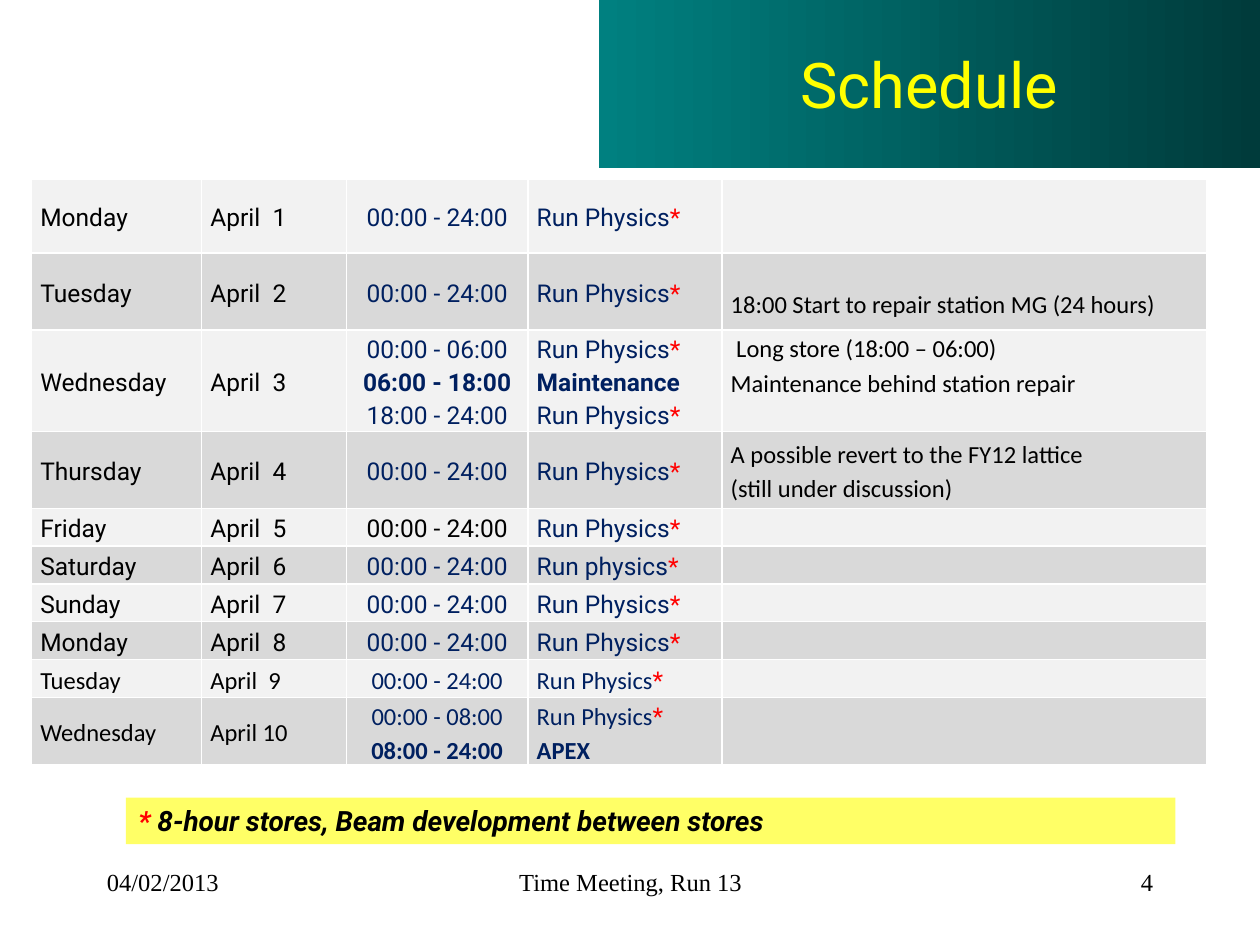
import pptx
import pptx.util
import pptx.dml.color
import pptx.enum.text
import pptx.oxml.ns
from lxml import etree

COLORS = {
    "black": "000000", "white": "FFFFFF", "red": "FF0000", "navy": "002060",
    "title": "FFFF00", "teal": "008080", "dark teal": "003B3B",
    "light": "F2F2F2", "gray": "D9D9D9", "note": "FFFF66",
}
DAY = "00:00 - 24:00"
RUN = "Run Physics*"
SCHEDULE = [
    ("Monday", "April  1", [DAY], [RUN], []),
    ("Tuesday", "April  2", [DAY], [RUN], ["18:00 Start to repair station MG (24 hours)"]),
    ("Wednesday", "April  3", ["00:00 - 06:00", "06:00 - 18:00", "18:00 - 24:00"],
     [RUN, "Maintenance", RUN],
     [" Long store (18:00 – 06:00)", "Maintenance behind station repair"]),
    ("Thursday", "April  4", [DAY], [RUN],
     ["A possible revert to the FY12 lattice", "(still under discussion)"]),
    ("Friday", "April  5", [DAY], [RUN], []),
    ("Saturday", "April  6", [DAY], ["Run physics*"], []),
    ("Sunday", "April  7", [DAY], [RUN], []),
    ("Monday", "April  8", [DAY], [RUN], []),
    ("Tuesday", "April  9", [DAY], [RUN], []),
    ("Wednesday", "April 10", ["00:00 - 08:00", "08:00 - 24:00"], [RUN, "APEX"], []),
]
BOLD = {"06:00 - 18:00", "Maintenance", "08:00 - 24:00", "APEX"}
COLUMN_WIDTHS = [1.35, 1.15, 1.44, 1.54, 3.85]
ROW_HEIGHTS = [0.59, 0.61, 0.7, 0.61] + [0.3] * 6
TIME, ACTIVITY, REMARK = 2, 3, 4
FRIDAY, FIRST_CALIBRI_ROW = 4, 8
ALIGN = pptx.enum.text.PP_ALIGN
ANCHOR = pptx.enum.text.MSO_ANCHOR
REMARK_ANCHORS = {1: ANCHOR.BOTTOM, 2: ANCHOR.TOP}
FOOTERS = [
    ("04/02/2013", 0.75, 2.08, ALIGN.LEFT),
    ("Time Meeting, Run 13", 3.42, 3.17, ALIGN.CENTER),
    ("4", 7.17, 2.08, ALIGN.RIGHT),
]
inches = pptx.util.Inches


def rgb(name):
    return pptx.dml.color.RGBColor.from_string(COLORS[name])


def add_span(para, text, size, face, color, bold=False, italic=False):
    span = para.add_run()
    span.text = text
    font = span.font
    font.size, font.name = pptx.util.Pt(size), face
    font.bold, font.italic = bold, italic
    font.color.rgb = rgb(color)


def add_box(page, left, top, width, height):
    box = page.shapes.add_textbox(*map(inches, (left, top, width, height)))
    box.text_frame.word_wrap = True
    return box


def add_borders(cell):
    properties = cell._tc.get_or_add_tcPr()
    tag = pptx.oxml.ns.qn
    for side in "LRTB":
        line = etree.SubElement(properties, tag("a:ln" + side), w=str(pptx.util.Pt(1)))
        fill = etree.SubElement(line, tag("a:solidFill"))
        etree.SubElement(fill, tag("a:srgbClr"), val=COLORS["white"])


def fill_cell(cell, row, column, lines):
    add_borders(cell)
    cell.fill.solid()
    cell.fill.fore_color.rgb = rgb("gray" if row % 2 else "light")
    cell.margin_left = cell.margin_right = inches(0.07)
    cell.margin_top = cell.margin_bottom = 0
    cell.vertical_anchor = ANCHOR.MIDDLE
    if column == REMARK and row in REMARK_ANCHORS:
        cell.vertical_anchor = REMARK_ANCHORS[row]
        if row == 1:
            cell.margin_bottom = inches(0.08)
    frame = cell.text_frame
    if not lines:
        etree.SubElement(frame.paragraphs[0]._p, pptx.oxml.ns.qn("a:endParaRPr"), sz="1400")
    face = "Calibri" if column == REMARK or row >= FIRST_CALIBRI_ROW else "Roboto"
    navy = column == ACTIVITY or (column == TIME and row != FRIDAY)
    for index, text in enumerate(lines):
        para = frame.add_paragraph() if index else frame.paragraphs[0]
        para.line_spacing = 1.15
        para.alignment = ALIGN.CENTER if column == TIME else ALIGN.LEFT
        add_span(para, text.rstrip("*"), 14, face, "navy" if navy else "black", text in BOLD)
        if text.endswith("*"):
            add_span(para, "*", 14, "Roboto", "red")


def add_title(page):
    title = page.shapes.title
    title.left, title.top, title.width, title.height = map(inches, (4.75, 0, 5.25, 1.33))
    title.fill.gradient()
    title.fill.gradient_angle = 0
    for stop, color, position in zip(title.fill.gradient_stops, ("teal", "dark teal"), (0, 1)):
        stop.color.rgb = rgb(color)
        stop.position = position
    frame = title.text_frame
    frame.auto_size = pptx.enum.text.MSO_AUTO_SIZE.NONE
    frame.vertical_anchor = ANCHOR.MIDDLE
    frame.paragraphs[0].alignment = ALIGN.CENTER
    add_span(frame.paragraphs[0], "Schedule", 36, "Roboto", "title")


def add_schedule(page):
    table = page.shapes.add_table(
        len(SCHEDULE), len(COLUMN_WIDTHS), *map(inches, (0.25, 1.42, 9.33, 4.67))).table
    for column, width in zip(table.columns, COLUMN_WIDTHS):
        column.width = inches(width)
    for row, height in zip(table.rows, ROW_HEIGHTS):
        row.height = inches(height)
    for row, (weekday, date, *rest) in enumerate(SCHEDULE):
        for column, lines in enumerate(([weekday], [date], *rest)):
            fill_cell(table.cell(row, column), row, column, lines)


def add_note(page):
    note = add_box(page, 1, 6.33, 8.33, 0.37)
    note.fill.solid()
    note.fill.fore_color.rgb = rgb("note")
    para = note.text_frame.paragraphs[0]
    add_span(para, "*", 16, "Roboto", "red", True, True)
    add_span(para, " 8-hour stores, Beam development between stores", 16, "Roboto", "black", True, True)


def main():
    deck = pptx.Presentation()
    deck.slide_width, deck.slide_height = inches(10), inches(7.5)
    page = deck.slides.add_slide(deck.slide_layouts[5])
    add_title(page)
    for text, left, width, alignment in FOOTERS:
        para = add_box(page, left, 6.83, width, 0.5).text_frame.paragraphs[0]
        para.alignment = alignment
        add_span(para, text, 14, "Times New Roman", "black")
    add_note(page)
    add_schedule(page)
    deck.save("out.pptx")


if __name__ == "__main__":
    main()
